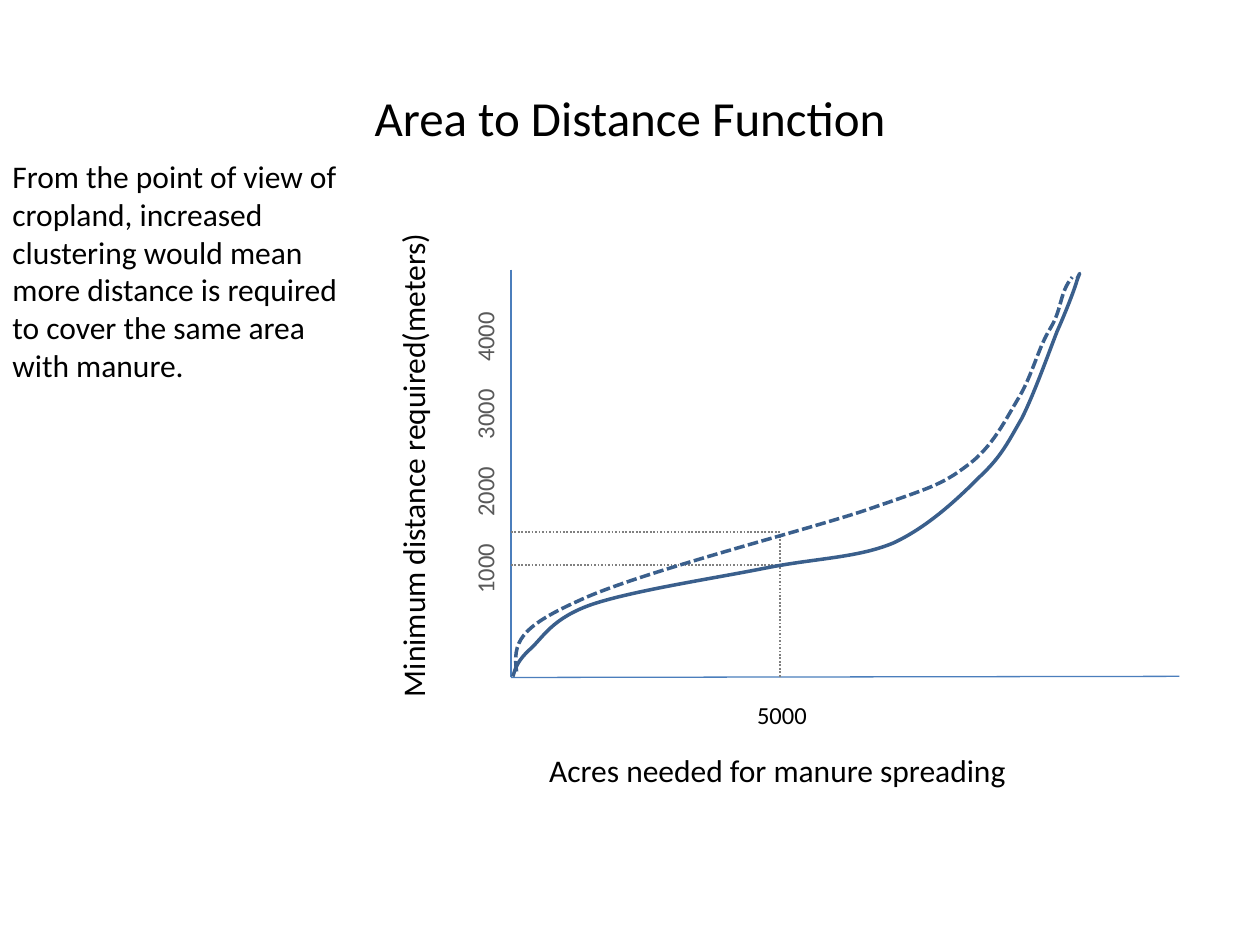
from lxml.etree import SubElement
from pptx import Presentation
from pptx.dml.color import RGBColor as RGB
from pptx.enum.dml import MSO_LINE as Dash
from pptx.enum.shapes import MSO_CONNECTOR as Conn
from pptx.enum.text import MSO_ANCHOR as Anchor, PP_ALIGN as Align
from pptx.oxml.ns import qn
from pptx.util import Inches, Pt

BLACK = RGB(0x00, 0x00, 0x00)
DARK = RGB(0x59, 0x59, 0x59)
GRAY = RGB(0x80, 0x80, 0x80)
BLUE = RGB(0x4B, 0x7E, 0xBC)
NAVY = RGB(0x3A, 0x5F, 0x8C)

deck = Presentation()
deck.slide_width, deck.slide_height = Inches(10), Inches(7.5)
slide = deck.slides.add_slide(deck.slide_layouts[6])
shapes = slide.shapes

# The slide is a grid of 100 columns by 75 rows of square cells.
CELL = deck.slide_width / 100


def grid(*nums):
    return [round(n * CELL) for n in nums]


def label(words, place, size, color=BLACK, turn=0):
    """Add a text box; turned labels stay on one line."""
    box = shapes.add_textbox(*grid(*place))
    box.rotation = turn
    frame = box.text_frame
    frame.word_wrap = turn == 0
    frame.text = words
    para = frame.paragraphs[0]
    para.font.name, para.font.size = "Calibri", Pt(size)
    para.font.color.rgb = color
    return frame


title = label("Area to Distance Function", (5, 3, 90, 12.5), 28)
title.vertical_anchor = Anchor.MIDDLE
title.paragraphs[0].alignment = Align.CENTER
label("From the point of view of cropland, increased clustering would mean "
      "more distance is required to cover the same area with manure.",
      (0, 11.97, 30.1, 22.2), 18)

# Axes and guides
LEFT, BASE, MID = 40.55, 53.77, 61.93
LINES = [
    ((LEFT, 21.4, LEFT, BASE), BLUE, 0.75, None),
    ((LEFT, BASE, 93.6, 53.68), BLUE, 0.75, None),
    ((MID, 53.7, MID, 42.4), GRAY, 1, Dash.ROUND_DOT),
    ((LEFT, 44.85, MID, 44.85), GRAY, 1, Dash.ROUND_DOT),
    ((LEFT, 42.25, MID, 42.25), GRAY, 1, Dash.ROUND_DOT),
]
for ends, color, width, dash in LINES:
    line = shapes.add_connector(Conn.STRAIGHT, *grid(*ends))
    line.line.color.rgb, line.line.width = color, Pt(width)
    if dash:
        line.line.dash_style = dash
    SubElement(line._element.spPr, qn("a:effectLst"))

# Curves: a start point, then two handles and an end for each Bezier span
SOLID = [
    (40.7, 53.7),
    (40.9, 53.1), (41, 52.5), (42.1, 51.5),
    (43.1, 50.6), (43.8, 49.1), (46.9, 48),
    (50.1, 46.9), (56.7, 45.9), (60.7, 45.1),
    (64.7, 44.3), (68, 44.3), (70.9, 43.1),
    (73.7, 41.8), (76.1, 39.5), (77.8, 37.8),
    (79.5, 36.2), (80, 35.1), (81.1, 33.2),
    (82.1, 31.2), (83.2, 28.1), (83.9, 26.3),
    (84.7, 24.5), (85.3, 22.9), (85.5, 22.2),
    (85.8, 21.4), (85.7, 21.7), (85.5, 22.1),
]
DASHED = [
    (41, 53.3),
    (40.7, 51), (41.2, 49.8), (45.9, 47.7),
    (50.5, 45.5), (63.6, 42.2), (68.7, 40.5),
    (73.9, 38.7), (74.7, 38.5), (76.7, 37),
    (78.8, 35.5), (79.8, 33.3), (80.9, 31.5),
    (82, 29.6), (82.4, 27.6), (83.4, 26),
    (84.3, 24.5), (84.1, 23.2), (85.1, 22),
]
for knots, dash in ((SOLID, None), (DASHED, Dash.SQUARE_DOT)):
    pen = shapes.build_freeform(*grid(*knots[0]))
    pen.add_line_segments([grid(*k) for k in knots[1:]], close=False)
    curve = pen.convert_to_shape()
    curve.shadow.inherit = False
    curve.fill.background()
    curve.line.color.rgb, curve.line.width = NAVY, Pt(2)
    if dash:
        curve.line.dash_style = dash
    # Turn each three straight steps into one Bezier span.
    steps = list(curve._element.iter(qn("a:lnTo")))
    for first, *rest in zip(steps[::3], steps[1::3], steps[2::3]):
        first.tag = qn("a:cubicBezTo")
        for step in rest:
            first.append(step[0])
            step.getparent().remove(step)

# Axis titles and ticks
label("Acres needed for manure spreading", (42.6, 59.1, 52.1, 4), 18)
label("Minimum distance required(meters)", (13.15, 34.7, 39.2, 4), 18, turn=270)
label("5000", (59.1, 55.1, 8.1, 3.4), 14)
for i in range(4):
    label(str(1000 * (i + 1)), (35.5, 43.4 - 6.13 * i, 6, 3.4), 14, DARK, 270)

deck.save("out.pptx")
